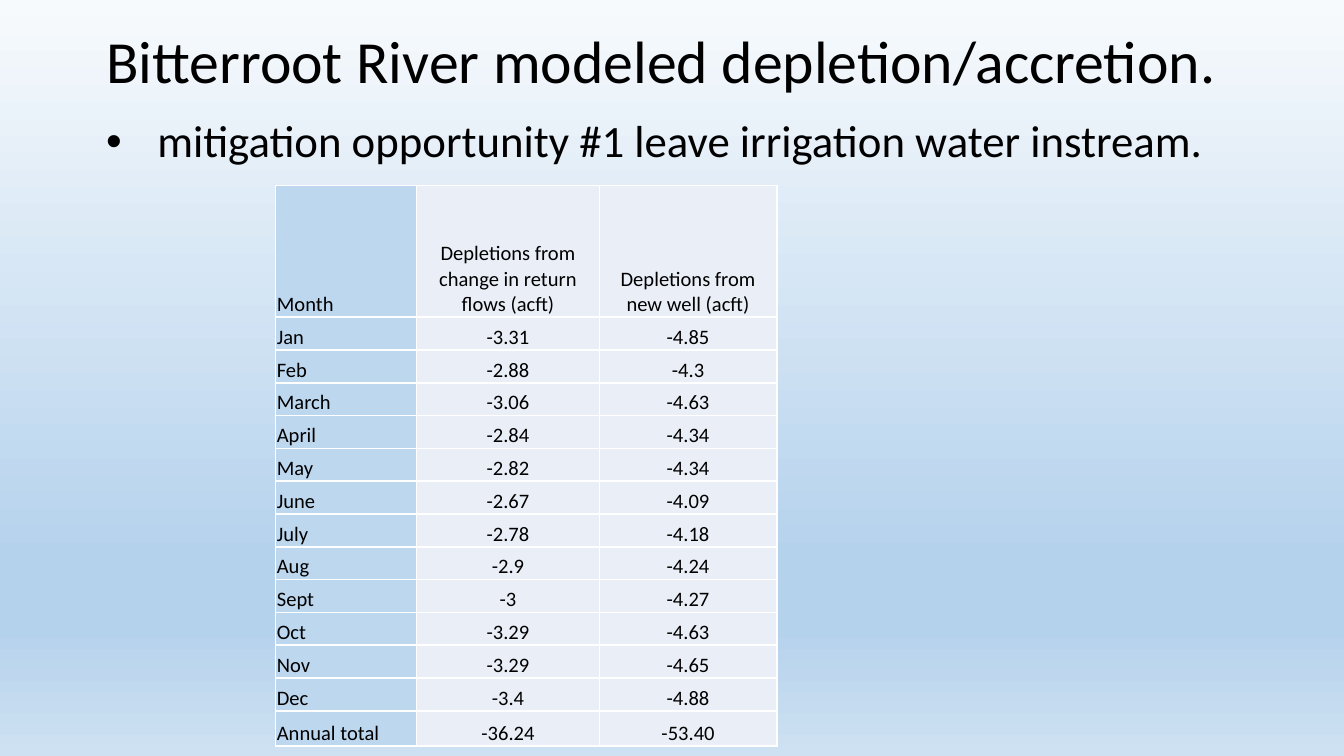
from dataclasses import dataclass

from lxml.etree import SubElement as Sub
from pptx import Presentation as Deck
from pptx.dml.color import RGBColor as Rgb
from pptx.enum.text import MSO_ANCHOR as Anchor, MSO_AUTO_SIZE as Auto, PP_ALIGN as Align
from pptx.oxml.ns import qn
from pptx.util import Inches, Pt

COLS = 1000
ROWS = COLS * 9 / 16
CELL = Inches(10) / COLS


@dataclass(frozen=True)
class Theme:
    """Hold the colours, font and type sizes."""
    font: str = "Calibri"
    ink: str = "000000"
    rule: str = "FFFFFF"
    side: str = "BDD7EE"
    body: str = "EAEFF7"
    sky: tuple = ((0, "F7FAFD"), (74, "B5D2EC"), (83, "B5D2EC"), (100, "CEE1F2"))
    head: int = 32
    lead: int = 24
    small: int = 11


LOOK = Theme()
TITLE = "Bitterroot River modeled depletion/accretion."
POINT = "mitigation opportunity #1 leave irrigation water instream."
DATA = (
    ("Month", "Depletions from change in return flows (acft)", "Depletions from new well (acft)"),
    ("Jan", "-3.31", "-4.85"),
    ("Feb", "-2.88", "-4.3"),
    ("March", "-3.06", "-4.63"),
    ("April", "-2.84", "-4.34"),
    ("May", "-2.82", "-4.34"),
    ("June", "-2.67", "-4.09"),
    ("July", "-2.78", "-4.18"),
    ("Aug", "-2.9", "-4.24"),
    ("Sept", "-3", "-4.27"),
    ("Oct", "-3.29", "-4.63"),
    ("Nov", "-3.29", "-4.65"),
    ("Dec", "-3.4", "-4.88"),
    ("Annual total", "-36.24", "-53.40"),
)


def grid(*spans):
    """Turn grid spans into slide lengths."""
    return [int(span * CELL) for span in spans]


def write(para, text, size, align=Align.LEFT):
    """Add one styled run to a paragraph."""
    para.alignment = align
    run = para.add_run()
    run.text = text
    run.font.name, run.font.size = LOOK.font, Pt(size)
    run.font.color.rgb = Rgb.from_string(LOOK.ink)


def paint(slide):
    """Fill the background with the sky gradient."""
    fill = slide.background.fill
    fill.gradient()
    fill.gradient_angle = 270
    stops = next(slide.element.iter(qn("a:gsLst")))
    for old in list(stops):
        stops.remove(old)
    for place, tint in LOOK.sky:
        stop = Sub(stops, qn("a:gs"), pos=str(place * 1000))
        Sub(stop, qn("a:srgbClr"), val=tint)


def bullet(para, dent):
    """Give a paragraph a hanging bullet."""
    props = para._p.get_or_add_pPr()
    props.set("marL", str(dent))
    props.set("indent", str(-dent))
    Sub(props, qn("a:buFont"), typeface="Arial")
    Sub(props, qn("a:buChar"), char="•")


def heading(slide, box):
    """Set the title and its bulleted point in the box."""
    shape = slide.shapes.title
    shape.left, shape.top, shape.width, shape.height = grid(*box)
    frame = shape.text_frame
    frame.word_wrap, frame.auto_size = True, Auto.NONE
    frame.vertical_anchor = Anchor.TOP
    first, second = frame.paragraphs[0], frame.add_paragraph()
    for para, text, size in ((first, TITLE, LOOK.head), (second, POINT, LOOK.lead)):
        para.line_spacing = 0.9
        para.space_before, para.space_after = Pt(0), Pt(12)
        write(para, text, size)
    bullet(second, Inches(0.38))


def border(cell):
    """Draw a thin rule on each side of a cell."""
    props = cell._tc.get_or_add_tcPr()
    for spot, side in enumerate(("L", "R", "T", "B")):
        line = props.makeelement(qn("a:ln" + side), {"w": str(Pt(1))})
        Sub(Sub(line, qn("a:solidFill")), qn("a:srgbClr"), val=LOOK.rule)
        props.insert(spot, line)


def fill_in(cell, text, first):
    """Format a cell and write its text."""
    cell.margin_left = cell.margin_right = cell.margin_top = Inches(0.01)
    cell.margin_bottom = 0
    cell.vertical_anchor = Anchor.BOTTOM
    cell.fill.solid()
    cell.fill.fore_color.rgb = Rgb.from_string(LOOK.side if first else LOOK.body)
    border(cell)
    align = Align.LEFT if first else Align.CENTER
    write(cell.text_frame.paragraphs[0], text, LOOK.small, align)


def monthly(slide, box, wides, top, last):
    """Place the depletion table, with equal month rows, in the box."""
    table = slide.shapes.add_table(len(DATA), len(wides), *grid(*box)).table
    table.first_row = table.horz_banding = False
    for col, wide in zip(table.columns, grid(*wides)):
        col.width = wide
    count = len(DATA) - 2
    month = (box[3] - top - last) / count
    for row, tall in zip(table.rows, grid(top, *[month] * count, last)):
        row.height = tall
    for r, line in enumerate(DATA):
        for c, text in enumerate(line):
            fill_in(table.cell(r, c), text, c == 0)


def main():
    """Build and save the slide."""
    deck = Deck()
    deck.slide_width, deck.slide_height = grid(COLS, ROWS)
    slide = deck.slides.add_slide(deck.slide_layouts[5])
    paint(slide)
    heading(slide, (69, 19, 862, 103))
    monthly(slide, (205, 138, 373, 417), (105, 136, 132), 98, 26)
    deck.save("out.pptx")


if __name__ == "__main__":
    main()
